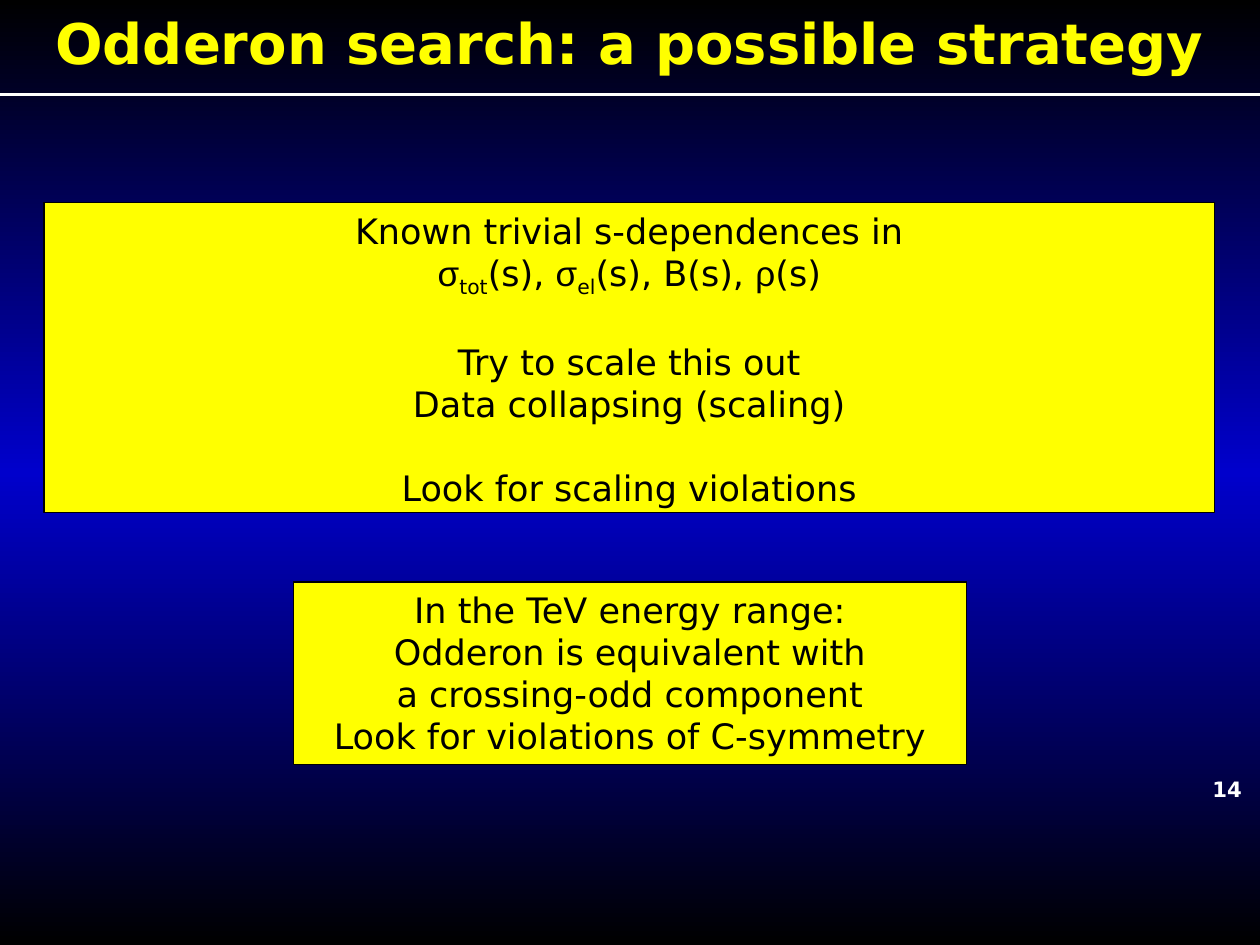
import copy

import pptx
import pptx.dml.color
import pptx.enum.shapes
import pptx.enum.text
import pptx.oxml.ns
import pptx.util
from lxml import etree

Inches = pptx.util.Inches
Pt = pptx.util.Pt
qn = pptx.oxml.ns.qn

SANS = "DejaVu Sans"
GREEK = "Arial"
YELLOW, WHITE, BLACK, BLUE = "FFFF00", "FFFFFF", "000000", "0000CC"
GAP = 24  # points left before a new group of lines


def color(code):
    return pptx.dml.color.RGBColor.from_string(code)


def paint_back(slide):
    """Vertical gradient: black, blue in the middle, black."""
    fill = slide.background.fill
    fill.gradient()
    fill.gradient_angle = 270
    stops = slide.element.find(".//" + qn("a:gsLst"))
    stops.insert(1, copy.deepcopy(stops[0]))
    for stop, code, place in zip(fill.gradient_stops, (BLACK, BLUE, BLACK), (0, 0.5, 1)):
        stop.color.rgb = color(code)
        stop.position = place


def add_run(para, text, size, code, font=SANS, bold=False, sub=False):
    run = para.add_run()
    run.text = text
    run.font.name = font
    run.font.size = Pt(size)
    run.font.bold = bold
    run.font.color.rgb = color(code)
    if sub:
        run.font.subscript = True
        run._r.get_or_add_rPr().set("baseline", "-25000")


def add_rule(slide, y):
    rule = slide.shapes.add_connector(
        pptx.enum.shapes.MSO_CONNECTOR.STRAIGHT, 0, Inches(y), Inches(10), Inches(y))
    rule.line.color.rgb = color(WHITE)
    rule.line.width = Pt(1.45)
    etree.SubElement(rule._element.spPr, qn("a:effectLst"))


def add_label(slide, box, text, size, code, space=None):
    frame = slide.shapes.add_textbox(*map(Inches, box)).text_frame
    frame.word_wrap = True
    para = frame.paragraphs[0]
    para.alignment = pptx.enum.text.PP_ALIGN.CENTER
    para.line_spacing = space
    add_run(para, text, size, code, bold=True)


def add_panel(slide, box, groups):
    """Yellow box; groups hold lines, and lines hold (text, style) runs."""
    panel = slide.shapes.add_shape(
        pptx.enum.shapes.MSO_SHAPE.RECTANGLE, *map(Inches, box))
    panel.shadow.inherit = False
    panel.fill.solid()
    panel.fill.fore_color.rgb = color(YELLOW)
    panel.line.color.rgb = color(BLACK)
    panel.line.width = Pt(0.75)
    frame = panel.text_frame
    frame.word_wrap = True
    frame.vertical_anchor = pptx.enum.text.MSO_ANCHOR.TOP
    para = None
    for group in groups:
        for spot, line in enumerate(group):
            first = para is None
            para = frame.paragraphs[0] if first else frame.add_paragraph()
            para.alignment = pptx.enum.text.PP_ALIGN.CENTER
            if spot == 0 and not first:
                para.space_before = Pt(GAP)
            for text, style in line:
                add_run(para, text, 20, BLACK, **style)


def plain(*lines):
    return [[(line, {})] for line in lines]


def main():
    deck = pptx.Presentation()
    deck.slide_width, deck.slide_height = Inches(10), Inches(7.5)
    slide = deck.slides.add_slide(deck.slide_layouts[6])
    paint_back(slide)
    add_rule(slide, 0.75)

    # Scaling steps
    greek, sub = {"font": GREEK}, {"sub": True}
    terms = [("σ", greek), ("tot", sub), ("(s), ", {}),
             ("σ", greek), ("el", sub), ("(s), B(s), ", {}),
             ("ρ", greek), ("(s)", {})]
    add_panel(slide, (0.35, 1.61, 9.29, 2.46), [
        plain("Known trivial s-dependences in") + [terms],
        plain("Try to scale this out", "Data collapsing (scaling)"),
        plain("Look for scaling violations"),
    ])

    # Title and page number
    add_label(slide, (0, 0.05, 10, 0.79),
              "Odderon search: a possible strategy", 32, YELLOW, 0.97)
    add_label(slide, (9.5, 6.11, 0.48, 0.3), "14", 12.1, WHITE)

    # Symmetry argument
    add_panel(slide, (2.33, 4.62, 5.34, 1.45), [
        plain("In the TeV energy range:", "Odderon is equivalent with",
              "a crossing-odd component", "Look for violations of C-symmetry"),
    ])
    deck.save("out.pptx")


if __name__ == "__main__":
    main()
